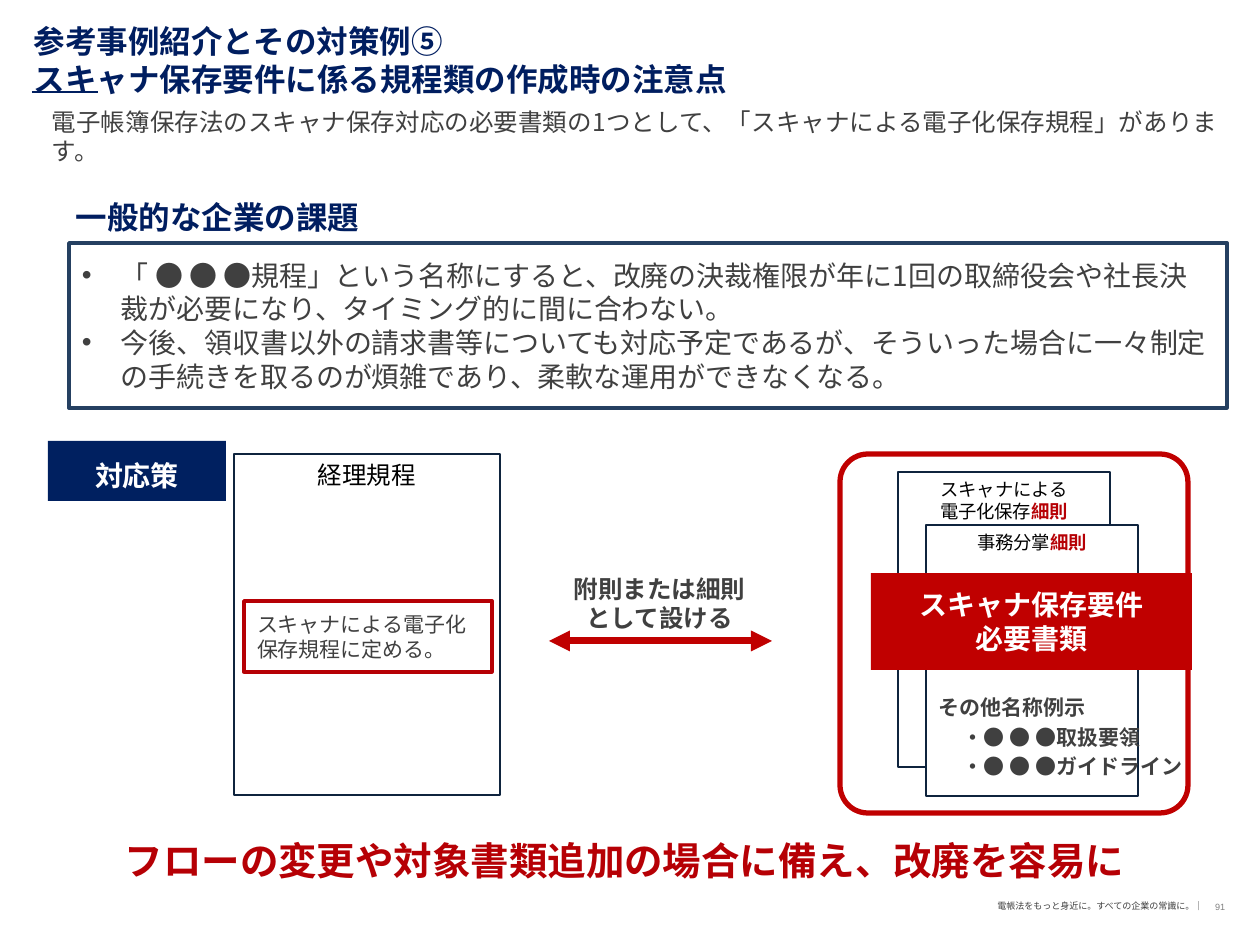
from typing import NamedTuple, Optional

from lxml.etree import SubElement
from pptx import Presentation
from pptx.dml.color import RGBColor as RGB
from pptx.enum.shapes import MSO_CONNECTOR as Conn, MSO_SHAPE as Kind
from pptx.enum.text import MSO_ANCHOR as Anchor, PP_ALIGN as Align
from pptx.oxml.ns import qn
from pptx.util import Emu, Pt

SCALE = 914400 / 126
FONT = "Noto Sans CJK JP"
NAVY = RGB(0x00, 0x1E, 0x60)
BLUE = RGB(0x00, 0x20, 0x60)
RULE = RGB(0x00, 0x1F, 0x60)
STEEL = RGB(0x25, 0x40, 0x61)
INK = RGB(0x0F, 0x24, 0x3E)
RED = RGB(0xC0, 0x00, 0x00)
CRIMSON = RGB(0xB6, 0x00, 0x05)
TEXT = RGB(0x40, 0x40, 0x40)
GRAY = RGB(0x80, 0x80, 0x80)
BLACK = RGB(0, 0, 0)
WHITE = RGB(255, 255, 255)
HANG = 39


class Area(NamedTuple):
    x: int
    y: int
    w: int
    h: int


class Box(NamedTuple):
    area: Area
    line: Optional[RGB] = None
    width: float = 0.75
    fill: Optional[RGB] = None
    kind: Kind = Kind.RECTANGLE


class Sheet(NamedTuple):
    box: Box
    size: float
    lines: list


def px(n: float) -> Emu:
    return Emu(round(n * SCALE))


def write(shape, lines: list, *, size: float, color: RGB = TEXT, bold: bool = False,
          align: Align = Align.LEFT, anchor: Anchor = Anchor.TOP, wrap: bool = True,
          pad: tuple = (13, 6, 13, 6), left: tuple = (), bullet: bool = False,
          gap: float = 0, font: str = FONT) -> None:
    """Fill a shape; a line is a string or a (plain, strong) pair."""
    frame = shape.text_frame
    frame.word_wrap = wrap
    frame.vertical_anchor = anchor
    (frame.margin_left, frame.margin_top,
     frame.margin_right, frame.margin_bottom) = map(px, pad)
    for i, line in enumerate(lines):
        par = frame.paragraphs[0] if i == 0 else frame.add_paragraph()
        props = par._p.get_or_add_pPr()
        if left:
            props.set("marL", str(px(left[i])))
        if bullet:
            props.set("indent", str(-px(left[i])))
            SubElement(props, qn("a:buFont"), typeface="Arial")
            SubElement(props, qn("a:buChar"), char="•")
        par.alignment = align
        par.line_spacing = Pt(round(size * 1.2, 2))
        if gap and i:
            par.space_before = Pt(gap)
        parts = (line,) if isinstance(line, str) else line
        for j, part in enumerate(parts):
            run = par.add_run()
            run.text = part
            run.font.size = Pt(size)
            run.font.name = font
            run.font.bold = bold or j > 0
            run.font.color.rgb = CRIMSON if j else color
            SubElement(run._r.get_or_add_rPr(), qn("a:ea"), typeface=font)


def draw(slide, box: Box):
    shape = slide.shapes.add_shape(box.kind, *map(px, box.area))
    shape.shadow.inherit = False
    if box.fill is None:
        shape.fill.background()
    else:
        shape.fill.solid()
        shape.fill.fore_color.rgb = box.fill
    if box.line is None:
        shape.line.fill.background()
    else:
        shape.line.color.rgb = box.line
        shape.line.width = Pt(box.width)
    return shape


def label(slide, area: Area, lines: list, **style) -> None:
    write(slide.shapes.add_textbox(*map(px, area)), lines, **style)


def rule(slide, x: int, y: int, end: int, color: RGB, width: float,
         heads: bool = False) -> None:
    """Draw a level line, with arrowheads at both ends if asked."""
    line = slide.shapes.add_connector(Conn.STRAIGHT, px(x), px(y), px(end), px(y))
    line.line.color.rgb = color
    line.line.width = Pt(width)
    if heads:
        for tag in ("a:headEnd", "a:tailEnd"):
            SubElement(line.line._get_or_add_ln(), qn(tag), type="triangle")
    SubElement(line._element.spPr, qn("a:effectLst"))


SHEETS = [
    Sheet(Box(Area(234, 454, 266, 341), INK), 14, ["経理規程"]),
    Sheet(Box(Area(898, 472, 212, 295), INK), 10.5,
          ["スキャナによる", ("電子化保存", "細則")]),
    Sheet(Box(Area(926, 525, 212, 271), INK, fill=WHITE), 10.5,
          [("事務分掌", "細則")]),
]


def main() -> None:
    prs = Presentation()
    prs.slide_width, prs.slide_height = px(1260), px(945)
    slide = prs.slides.add_slide(prs.slide_layouts[6])

    label(slide, Area(1173, 892, 71, 30), ["91"], size=5.2, color=GRAY, font="Arial",
          align=Align.RIGHT, anchor=Anchor.MIDDLE, pad=(0, 0, 19, 0))
    rule(slide, 32, 92, 98, RULE, 1)
    label(slide, Area(978, 895, 239, 24),
          ["電帳法をもっと身近に。すべての企業の常識に。｜"], size=5.2, align=Align.RIGHT)
    label(slide, Area(0, 101, 1249, 122),
          ["電子帳簿保存法のスキャナ保存対応の必要書類の1つとして、"
           "「スキャナによる電子化保存規程」があります。"], size=14, left=(HANG,))

    issue = draw(slide, Box(Area(69, 243, 1158, 165), STEEL, 2))
    write(issue,
          ["「 ● ● ●規程」という名称にすると、改廃の決裁権限が年に1回の取締役会や"
           "社長決裁が必要になり、タイミング的に間に合わない。",
           "今後、領収書以外の請求書等についても対応予定であるが、そういった場合に"
           "一々制定の手続きを取るのが煩雑であり、柔軟な運用ができなくなる。"],
          size=16, anchor=Anchor.MIDDLE, left=(HANG, HANG), bullet=True)

    for sheet in SHEETS:
        write(draw(slide, sheet.box), sheet.lines, size=sheet.size, color=BLACK,
              align=Align.CENTER, wrap=False)

    banner = dict(size=16, color=WHITE, bold=True, align=Align.CENTER,
                  anchor=Anchor.MIDDLE, wrap=False)
    tag = draw(slide, Box(Area(48, 441, 178, 60), fill=BLUE))
    write(tag, ["対応策"], pad=(13, 15, 13, 6), **banner)
    ring = draw(slide, Box(Area(840, 454, 348, 359), RED, 3,
                           kind=Kind.ROUNDED_RECTANGLE))
    ring.adjustments[0] = 0.08
    papers = draw(slide, Box(Area(871, 573, 321, 97), fill=RED))
    write(papers, ["スキャナ保存要件", "必要書類"], **banner)

    clause = draw(slide, Box(Area(244, 601, 248, 71), CRIMSON, 2))
    write(clause, ["スキャナによる電子化保存規程に定める。"], size=12,
          anchor=Anchor.MIDDLE)
    rule(slide, 549, 641, 772, RED, 4, heads=True)
    label(slide, Area(557, 568, 205, 72), ["附則または細則として設ける"],
          size=14, bold=True, align=Align.CENTER)

    label(slide, Area(21, 16, 1239, 62),
          ["参考事例紹介とその対策例⑤", "スキャナ保存要件に係る規程類の作成時の注意点"],
          size=18, color=NAVY, bold=True)
    label(slide, Area(0, 825, 1249, 71),
          ["フローの変更や対象書類追加の場合に備え、改廃を容易に"], size=22,
          color=CRIMSON, bold=True, align=Align.CENTER, anchor=Anchor.MIDDLE)
    label(slide, Area(926, 689, 280, 140),
          ["その他名称例示", "・● ● ●取扱要領", "・● ● ●ガイドライン"],
          size=12, bold=True, left=(0, 24, 24), gap=2.4)
    label(slide, Area(63, 192, 444, 136), ["一般的な企業の課題"],
          size=18, color=NAVY, bold=True)

    prs.save("out.pptx")


if __name__ == "__main__":
    main()
